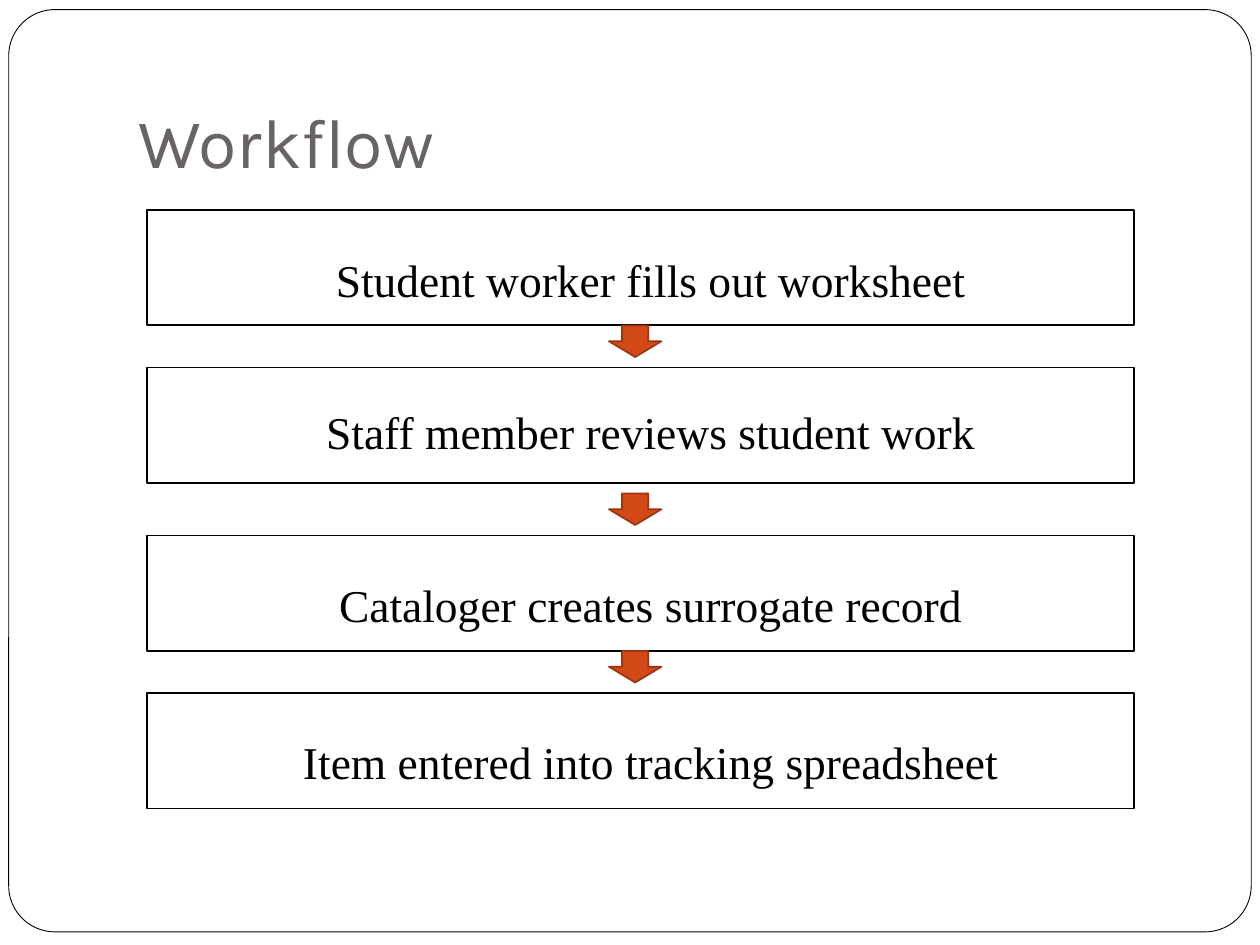
from dataclasses import dataclass

from pptx import Presentation
from pptx.dml.color import RGBColor
from pptx.enum import shapes, text
from pptx.util import Pt


@dataclass(frozen=True)
class Theme:
    paper: str = "FFFFFF"
    ink: str = "000000"
    heading: str = "696464"
    arrow: str = "D34817"
    arrow_edge: str = "9C3511"
    title_font: str = "Karla"
    body_font: str = "Times New Roman"
    title_size: float = 40
    body_size: float = 26


THEME = Theme()
# Each step: wording, top of its box, space above its text line
STEPS = [
    ("Student worker fills out worksheet", 120, 0),
    ("Staff member reviews student work", 210, 55.8),
    ("Cataloger creates surrogate record", 306, 67.8),
    ("Item entered into tracking spreadsheet", 396, 58.1),
]
ARROW_TOPS = [186, 282, 372]


def add_outlined(page, kind, bounds, fill, edge, weight=1):
    shape = page.shapes.add_shape(kind, *map(Pt, bounds))
    shape.shadow.inherit = False
    shape.fill.solid()
    shape.fill.fore_color.rgb = RGBColor.from_string(fill)
    shape.line.color.rgb = RGBColor.from_string(edge)
    shape.line.width = Pt(weight)
    return shape


def add_text(page, bounds, lines, font, size, color, insets):
    """Add a wrapping text box; insets run left, top, right, bottom."""
    box = page.shapes.add_textbox(*map(Pt, bounds))
    frame = box.text_frame
    frame.word_wrap = True
    frame.margin_left, frame.margin_top, frame.margin_right, frame.margin_bottom = map(Pt, insets)
    frame.text = "\n".join(lines)
    for para in frame.paragraphs:
        for span in para.runs:
            span.font.name = font
            span.font.size = Pt(size)
            span.font.color.rgb = RGBColor.from_string(color)
    return frame


def add_title(page, wording):
    frame = add_text(page, (72, 21.6, 612, 90), [wording], THEME.title_font,
                     THEME.title_size, THEME.heading, (7.2, 3.6, 7.2, 7.2))
    frame.vertical_anchor = text.MSO_ANCHOR.BOTTOM


def add_step_text(page):
    frame = add_text(page, (66, 144, 612, 354), [wording for wording, _, _ in STEPS],
                     THEME.body_font, THEME.body_size, THEME.ink, (7.2, 0, 7.2, 0))
    for para, (_, _, gap) in zip(frame.paragraphs, STEPS):
        para.alignment = text.PP_ALIGN.CENTER
        para.space_before = Pt(gap)


def main():
    deck = Presentation()
    deck.slide_width, deck.slide_height = Pt(720), Pt(540)
    page = deck.slides.add_slide(deck.slide_layouts[6])
    kinds = shapes.MSO_SHAPE

    border = add_outlined(page, kinds.ROUNDED_RECTANGLE, (5, 5.5, 710, 527),
                          THEME.paper, THEME.ink, 0.5)
    border.adjustments[0] = 0.05
    add_title(page, "Workflow")
    for _, top, _ in STEPS:
        add_outlined(page, kinds.RECTANGLE, (84, top, 564, 66), THEME.paper, THEME.ink)
    add_step_text(page)
    for top in ARROW_TOPS:
        add_outlined(page, kinds.DOWN_ARROW, (348, top, 30, 18), THEME.arrow, THEME.arrow_edge)

    deck.save("out.pptx")


if __name__ == "__main__":
    main()
